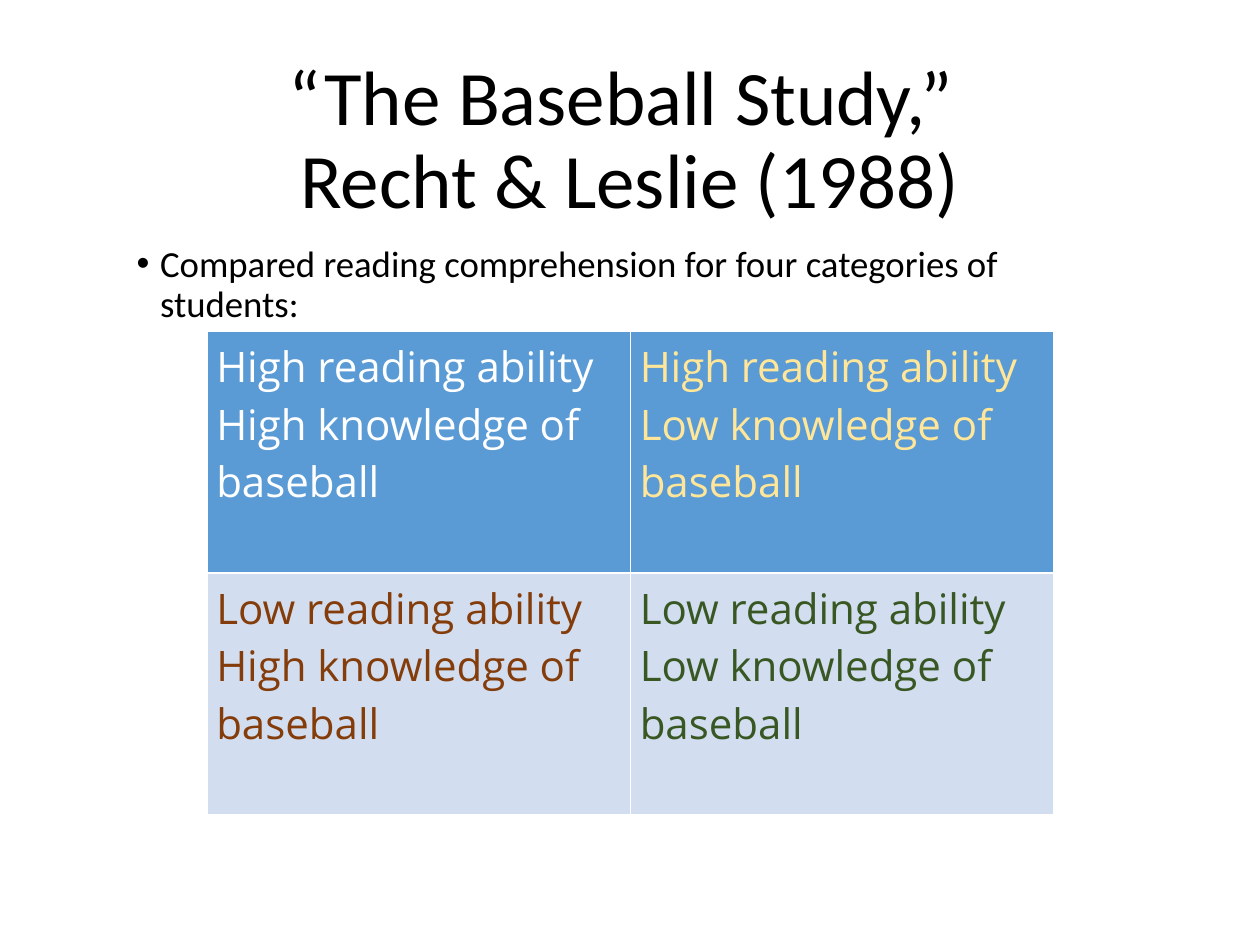
import pptx
import pptx.util
import pptx.dml.color
import pptx.enum.text
import pptx.oxml
import pptx.oxml.ns

Pt = pptx.util.Pt
RGBColor = pptx.dml.color.RGBColor

BLACK = RGBColor(0x00, 0x00, 0x00)
WHITE = RGBColor(0xFF, 0xFF, 0xFF)
YELLOW = RGBColor(0xFF, 0xE6, 0x99)
BROWN = RGBColor(0x84, 0x3C, 0x0B)
GREEN = RGBColor(0x38, 0x57, 0x23)
BLUE = RGBColor(0x5B, 0x9B, 0xD5)
PALE_BLUE = RGBColor(0xD2, 0xDE, 0xEF)


def add_span(para, text, font_name, size, color):
    span = para.add_run()
    span.text = text
    span.font.name = font_name
    span.font.size = Pt(size)
    span.font.bold = False
    span.font.color.rgb = color


def place(box, left, top, width, height):
    box.left, box.top = Pt(left), Pt(top)
    box.width, box.height = Pt(width), Pt(height)
    box.text_frame.word_wrap = True
    box.text_frame.auto_size = pptx.enum.text.MSO_AUTO_SIZE.NONE


deck = pptx.Presentation()
deck.slide_width, deck.slide_height = Pt(720), Pt(540)
page = deck.slides.add_slide(deck.slide_layouts[1])

title = page.shapes.title
place(title, 49.5, 28.75, 621, 104.4)
title.text_frame.vertical_anchor = pptx.enum.text.MSO_ANCHOR.MIDDLE
para = title.text_frame.paragraphs[0]
para.alignment = pptx.enum.text.PP_ALIGN.CENTER
para.line_spacing = 0.9
add_span(para, "“The Baseball Study,” ", "Calibri", 44, BLACK)
para.add_line_break()
add_span(para, "Recht & Leslie (1988)", "Calibri", 44, BLACK)

body = page.placeholders[1]
place(body, 70.8, 136.8, 578, 340.6)
para = body.text_frame.paragraphs[0]
para.line_spacing = 0.9
para.space_before = Pt(0)
properties = para._p.get_or_add_pPr()
properties.set("marL", str(Pt(13.5)))
properties.set("indent", str(Pt(-13.5)))
add_span(para, "Compared reading comprehension for four categories of students:",
         "Calibri", 21, BLACK)

table = page.shapes.add_table(2, 2, Pt(118.2), Pt(189.5), Pt(484), Pt(276)).table
table.first_row = False
table.horz_banding = False

rows = [
    ("High", BLUE, [("High", WHITE), ("Low", YELLOW)]),
    ("Low", PALE_BLUE, [("High", BROWN), ("Low", GREEN)]),
]
for row, (ability, fill_color, columns) in enumerate(rows):
    for column, (knowledge, text_color) in enumerate(columns):
        cell = table.cell(row, column)
        cell.margin_left = cell.margin_right = Pt(5.4)
        cell.margin_top = cell.margin_bottom = Pt(3.6)
        cell_properties = cell._tc.get_or_add_tcPr()
        for side in ("lnL", "lnR", "lnT", "lnB"):
            cell_properties.append(pptx.oxml.parse_xml(
                f'<a:{side} {pptx.oxml.ns.nsdecls("a")} w="{Pt(1)}">'
                f'<a:solidFill><a:srgbClr val="{WHITE}"/></a:solidFill></a:{side}>'))
        cell.fill.solid()
        cell.fill.fore_color.rgb = fill_color
        frame = cell.text_frame
        add_span(frame.paragraphs[0], f"{ability} reading ability",
                 "Open Sans", 24, text_color)
        add_span(frame.add_paragraph(), f"{knowledge} knowledge of baseball",
                 "Open Sans", 24, text_color)

deck.save("out.pptx")
